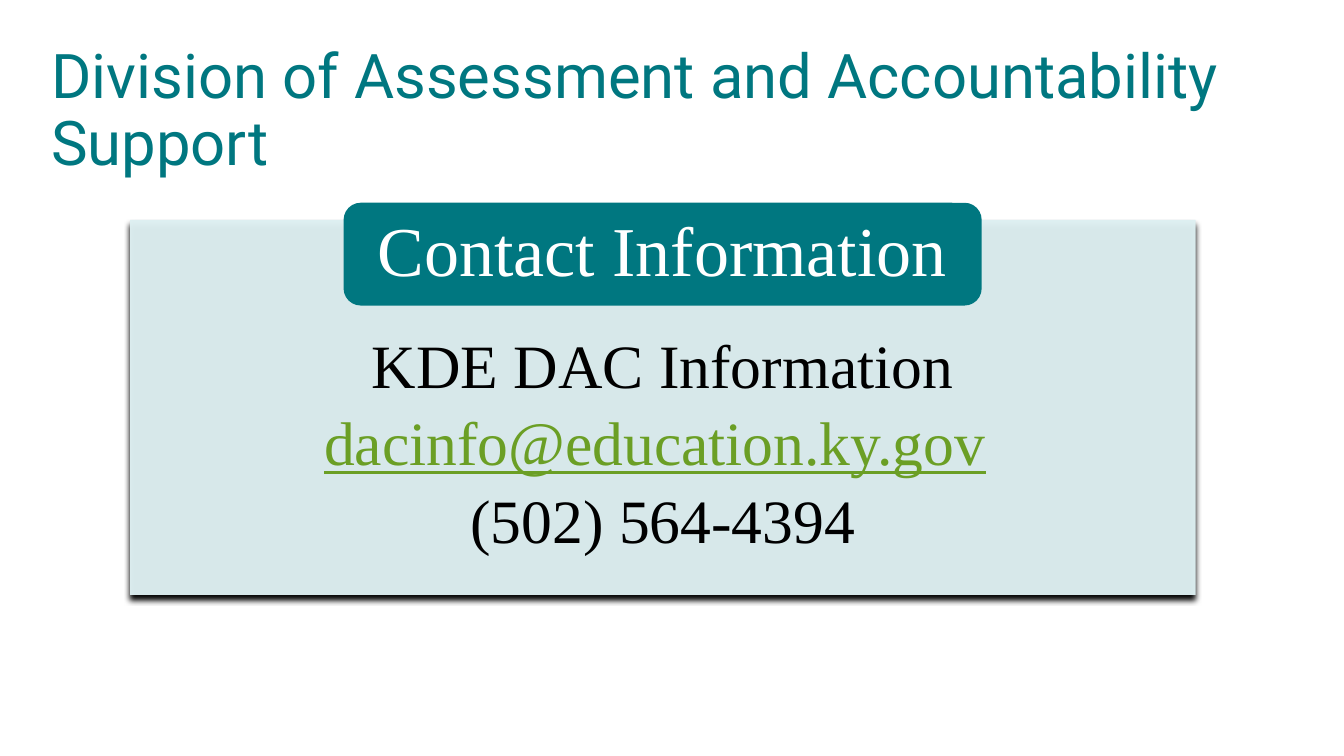
"""Build the contact slide of the Division of Assessment and Accountability Support."""
import pptx
import pptx.dml.color
import pptx.enum.shapes
import pptx.enum.text
import pptx.oxml
import pptx.oxml.ns
import pptx.util
from dataclasses import dataclass

Cm = pptx.util.Cm
Pt = pptx.util.Pt
MSO_SHAPE = pptx.enum.shapes.MSO_SHAPE
ANCHOR = pptx.enum.text.MSO_ANCHOR
ALIGN = pptx.enum.text.PP_ALIGN


@dataclass(frozen=True)
class Theme:
    """Colours, fonts and type sizes."""
    teal: str = "007780"
    pale: str = "DEF0F2"
    link: str = "6B9F25"
    black: str = "000000"
    white: str = "FFFFFF"
    title_font: str = "Roboto"
    body_font: str = "Times New Roman"
    body_size: int = 44
    badge_size: int = 50
    line_spacing: float = 0.9
    contact_gap: int = 8
    panel_alpha: int = 97


THEME = Theme()

TITLE = [[("Division of Assessment and Accountability Support", THEME.teal, False)]]
BADGE = [[("Contact Information", THEME.white, False)]]
CONTACT = [
    [("KDE DAC Information", THEME.black, False)],
    [("dacinfo@education.ky.gov", THEME.link, True), (" ", THEME.link, False)],
    [("(502) 564-4394", THEME.black, False)],
]

SLIDE_SIZE = (33.87, 19.05)
TITLE_BOX = (1.04, 0.99, 31.78, 3.68)
PANEL_BOX = (3.28, 5.54, 26.85, 9.45)
BADGE_BOX = (8.66, 5.11, 16.08, 2.59)


def rgb(colour):
    """Turn a hex string into a colour."""
    return pptx.dml.color.RGBColor.from_string(colour)


def write(shape, paragraphs, font, size, anchor, insets, align=ALIGN.LEFT, gap=0):
    """Fill a shape with paragraphs made of (text, colour, underlined) runs."""
    frame = shape.text_frame
    frame.word_wrap = True
    frame.vertical_anchor = anchor
    (frame.margin_left, frame.margin_top,
     frame.margin_right, frame.margin_bottom) = map(Cm, insets)
    for index, runs in enumerate(paragraphs):
        paragraph = frame.add_paragraph() if index else frame.paragraphs[0]
        paragraph.alignment = align
        paragraph.line_spacing = THEME.line_spacing
        paragraph.space_after = Pt(gap)
        for text, colour, underlined in runs:
            run = paragraph.add_run()
            run.text = text
            run.font.name = font
            run.font.size = Pt(size)
            run.font.color.rgb = rgb(colour)
            run.font.underline = underlined


def add_block(slide, kind, box, colour):
    """Add a filled shape without outline or shadow."""
    block = slide.shapes.add_shape(kind, *map(Cm, box))
    block.shadow.inherit = False
    block.fill.solid()
    block.fill.fore_color.rgb = rgb(colour)
    block.line.fill.background()
    return block


def soften(panel):
    """Give the panel slight transparency and a shadow below."""
    namespace = pptx.oxml.ns.nsdecls("a")
    properties = panel.fill._xPr
    fill_colour = properties.find(".//" + pptx.oxml.ns.qn("a:srgbClr"))
    fill_colour.append(pptx.oxml.parse_xml(
        f'<a:alpha {namespace} val="{THEME.panel_alpha * 1000}"/>'))
    effects = properties.find(pptx.oxml.ns.qn("a:effectLst"))
    effects.append(pptx.oxml.parse_xml(
        f'<a:outerShdw {namespace} blurRad="{Pt(4)}" dist="{Pt(4)}" dir="5400000" '
        f'rotWithShape="0"><a:srgbClr val="{THEME.black}"/></a:outerShdw>'))


def main():
    """Lay out the title, the contact panel and its badge."""
    deck = pptx.Presentation()
    deck.slide_width, deck.slide_height = map(Cm, SLIDE_SIZE)
    slide = deck.slides.add_slide(deck.slide_layouts[6])

    title = slide.shapes.add_textbox(*map(Cm, TITLE_BOX))
    write(title, TITLE, THEME.title_font, THEME.body_size, ANCHOR.MIDDLE,
          (0.25, 0.13, 0.25, 0.13))

    panel = add_block(slide, MSO_SHAPE.RECTANGLE, PANEL_BOX, THEME.pale)
    soften(panel)
    write(panel, CONTACT, THEME.body_font, THEME.body_size, ANCHOR.TOP,
          (2.08, 2.9, 2.08, 0.86), ALIGN.CENTER, THEME.contact_gap)

    badge = add_block(slide, MSO_SHAPE.ROUNDED_RECTANGLE, BADGE_BOX, THEME.teal)
    write(badge, BADGE, THEME.body_font, THEME.badge_size, ANCHOR.MIDDLE,
          (0.7, 0, 0.7, 0), ALIGN.CENTER)

    deck.save("out.pptx")


if __name__ == "__main__":
    main()
